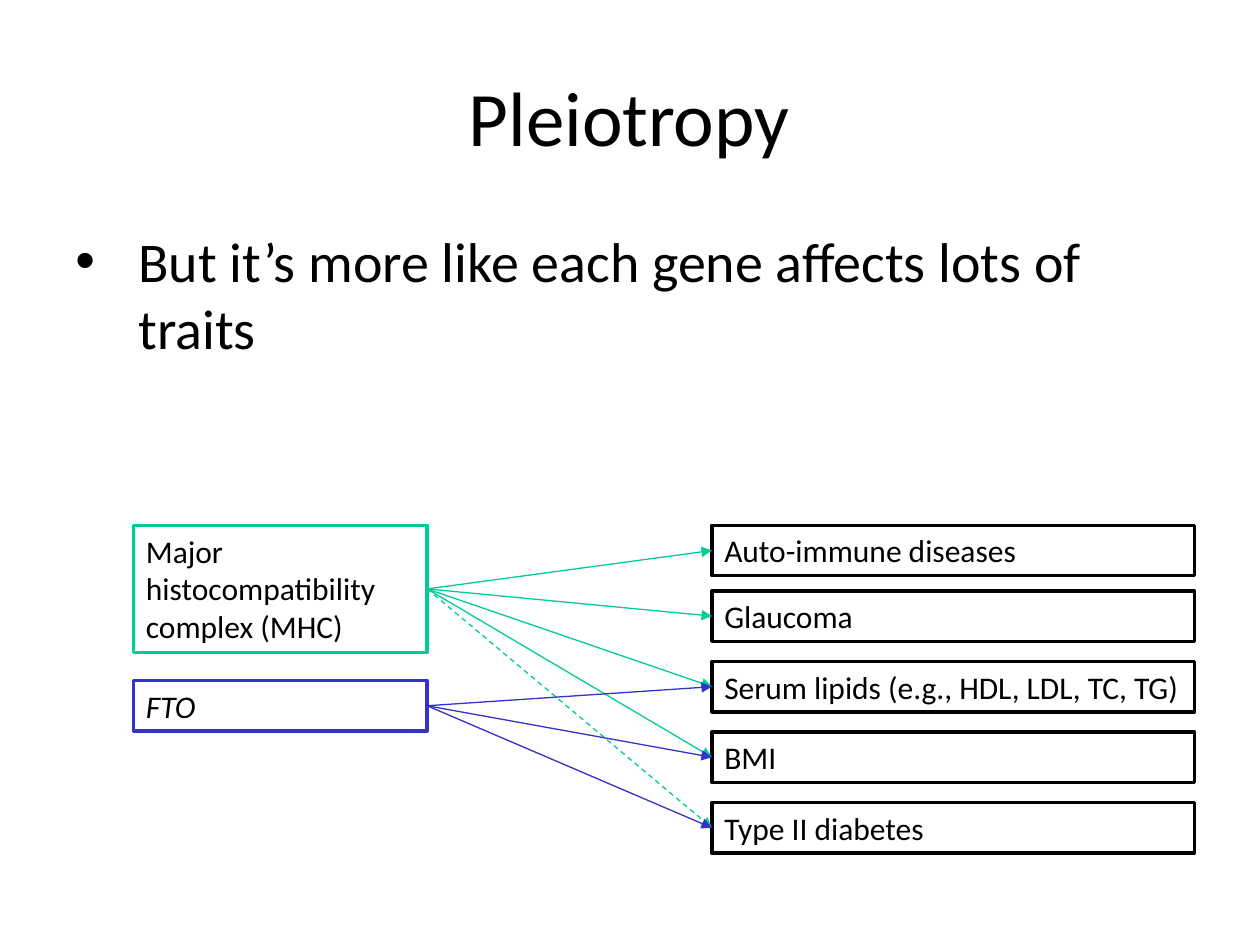
from typing import NamedTuple

from pptx import Presentation
from pptx import util as u
from pptx.dml.color import RGBColor
from pptx.enum import dml, shapes, text
from pptx.oxml.ns import qn
from lxml import etree

BLACK = RGBColor(0x00, 0x00, 0x00)
WHITE = RGBColor(0xFF, 0xFF, 0xFF)
GREEN = RGBColor(0x00, 0xCC, 0x99)
BLUE = RGBColor(0x33, 0x33, 0xCC)
FONT = "Calibri"

GRID_TOP, ROW_PITCH, ROW_HEIGHT = 4.69, 0.56, 0.4
RIGHT_SITE, LEFT_SITE = 3, 1


class Column(NamedTuple):
    left: float
    width: float


class Box(NamedTuple):
    label: str
    row: float
    color: RGBColor = BLACK
    height: float = ROW_HEIGHT
    italic: bool = False


class Effect(NamedTuple):
    gene: str
    trait: str
    dashed: bool = False


GENE_COLUMN = Column(1.06, 2.33)
TRAIT_COLUMN = Column(5.65, 3.83)

MHC = "Major histocompatibility complex (MHC)"
FTO = "FTO"
IMMUNE = "Auto-immune diseases"
GLAUCOMA = "Glaucoma"
LIPIDS = "Serum lipids (e.g., HDL, LDL, TC, TG)"
BMI = "BMI"
DIABETES = "Type II diabetes"

GENES = [
    Box(MHC, -0.93, GREEN, height=1.01),
    Box(FTO, 1.27, BLUE, italic=True),
]
TRAITS = [
    Box(IMMUNE, -0.93),
    Box(GLAUCOMA, 0),
    Box(LIPIDS, 1),
    Box(BMI, 2),
    Box(DIABETES, 3),
]
EFFECTS = [
    Effect(MHC, IMMUNE),
    Effect(MHC, GLAUCOMA),
    Effect(MHC, LIPIDS),
    Effect(MHC, BMI),
    Effect(MHC, DIABETES, dashed=True),
    Effect(FTO, BMI),
    Effect(FTO, DIABETES),
    Effect(FTO, LIPIDS),
]


def add_run(p, words: str, size: float, italic: bool = False) -> None:
    r = p.add_run()
    r.text = words
    r.font.name = FONT
    r.font.size = u.Pt(size)
    r.font.color.rgb = BLACK
    if italic:
        r.font.italic = True


def add_text(s, top: float, height: float, words: str, size: float):
    sp = s.shapes.add_textbox(
        u.Inches(0.5), u.Inches(top), u.Inches(8.99), u.Inches(height)
    )
    tf = sp.text_frame
    tf.word_wrap = True
    add_run(tf.paragraphs[0], words, size)
    return tf


def add_bullet(p, indent: float) -> None:
    ppr = p._p.get_or_add_pPr()
    ppr.set("marL", str(u.Inches(indent)))
    ppr.set("indent", str(-u.Inches(indent)))
    etree.SubElement(ppr, qn("a:buFont"), typeface="Arial")
    etree.SubElement(ppr, qn("a:buChar"), char="•")


def add_box(s, column: Column, box: Box):
    sp = s.shapes.add_shape(
        shapes.MSO_SHAPE.RECTANGLE,
        u.Inches(column.left),
        u.Inches(GRID_TOP + ROW_PITCH * box.row),
        u.Inches(column.width),
        u.Inches(box.height),
    )
    sp.shadow.inherit = False
    sp.fill.solid()
    sp.fill.fore_color.rgb = WHITE
    sp.line.color.rgb = box.color
    sp.line.width = u.Pt(2)
    tf = sp.text_frame
    tf.word_wrap = True
    tf.auto_size = text.MSO_AUTO_SIZE.SHAPE_TO_FIT_TEXT
    tf.vertical_anchor = text.MSO_ANCHOR.TOP
    p = tf.paragraphs[0]
    p.alignment = text.PP_ALIGN.LEFT
    add_run(p, box.label, 18, box.italic)
    return sp


def add_arrow(s, start, end, color: RGBColor, dashed: bool) -> None:
    cx = s.shapes.add_connector(shapes.MSO_CONNECTOR.STRAIGHT, 0, 0, 0, 0)
    cx.begin_connect(start, RIGHT_SITE)
    cx.end_connect(end, LEFT_SITE)
    cx.line.color.rgb = color
    cx.line.width = u.Pt(0.75)
    if dashed:
        cx.line.dash_style = dml.MSO_LINE.DASH
    etree.SubElement(cx.line._get_or_add_ln(), qn("a:tailEnd"), type="triangle")
    etree.SubElement(cx._element.spPr, qn("a:effectLst"))


def main() -> None:
    prs = Presentation()
    prs.slide_width, prs.slide_height = u.Inches(10), u.Inches(7.5)
    s = prs.slides.add_slide(prs.slide_layouts[6])

    tf = add_text(s, 0.3, 1.24, "Pleiotropy", 44)
    tf.vertical_anchor = text.MSO_ANCHOR.MIDDLE
    tf.paragraphs[0].alignment = text.PP_ALIGN.CENTER

    tf = add_text(
        s, 1.75, 5.75, "But it’s more like each gene affects lots of traits", 32
    )
    p = tf.paragraphs[0]
    p.space_before = u.Pt(8)
    add_bullet(p, 0.5)

    genes = {box.label: add_box(s, GENE_COLUMN, box) for box in GENES}
    traits = {box.label: add_box(s, TRAIT_COLUMN, box) for box in TRAITS}
    colors = {box.label: box.color for box in GENES}
    for effect in EFFECTS:
        add_arrow(
            s,
            genes[effect.gene],
            traits[effect.trait],
            colors[effect.gene],
            effect.dashed,
        )

    prs.save("out.pptx")


if __name__ == "__main__":
    main()
